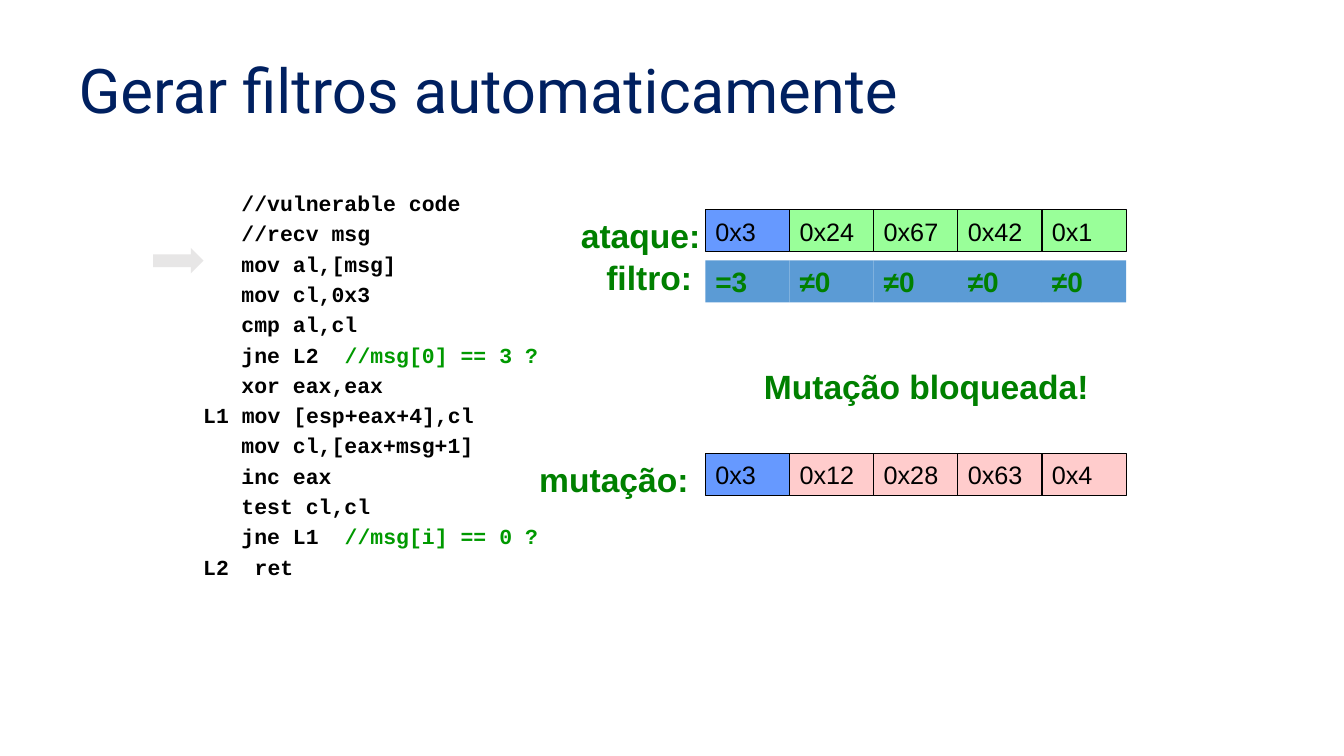
from pptx import Presentation
from pptx.dml.color import RGBColor
from pptx.enum import shapes, text
from pptx.util import Cm, Pt

NAVY = RGBColor(0x00, 0x20, 0x60)
BLACK = RGBColor(0x00, 0x00, 0x00)
GREEN = RGBColor(0x00, 0x80, 0x00)
COMMENT = RGBColor(0x00, 0x99, 0x00)
BLUE = RGBColor(0x66, 0x99, 0xFF)
LIME = RGBColor(0x99, 0xFF, 0x99)
PINK = RGBColor(0xFF, 0xCC, 0xCC)
STEEL = RGBColor(0x5B, 0x9B, 0xD5)
GRAY = RGBColor(0xE7, 0xE6, 0xE6)

ROW_LEFT, CELL_W, CELL_H = 17.78, 2.12, 1.06

CODE = [
    ("\t //vulnerable code", ""),
    ("\t //recv msg", ""),
    ("\t mov al,[msg]", ""),
    ("\t mov cl,0x3", ""),
    ("\t cmp al,cl", ""),
    ("\t jne L2  ", "//msg[0] == 3 ?"),
    ("\t xor eax,eax", ""),
    ("L1 mov [esp+eax+4],cl", ""),
    ("\t mov cl,[eax+msg+1]", ""),
    ("\t inc eax", ""),
    ("\t test cl,cl", ""),
    ("\t jne L1  ", "//msg[i] == 0 ?"),
    ("L2  ret", ""),
]


def add_run(p, content, size=24, color=GREEN, font="Arial", bold=True):
    """Append a formatted run to a paragraph."""
    r = p.add_run()
    r.text = content
    r.font.size = Pt(size)
    r.font.name = font
    r.font.bold = bold
    r.font.color.rgb = color


def add_box(s, left, top, width, height):
    """Add an empty wrapping text box and return its text frame."""
    tf = s.shapes.add_textbox(Cm(left), Cm(top), Cm(width), Cm(height)).text_frame
    tf.word_wrap = True
    return tf


def add_label(s, content, left, top, width):
    """Add a bold green label."""
    add_run(add_box(s, left, top, width, 1.27).paragraphs[0], content)


def add_shape(parent, kind, left, top, width, height, fill, line=None):
    """Add a filled preset shape, outlined only when a line colour is given."""
    sp = parent.shapes.add_shape(kind, Cm(left), Cm(top), Cm(width), Cm(height))
    sp.shadow.inherit = False
    sp.fill.solid()
    sp.fill.fore_color.rgb = fill
    if line is None:
        sp.line.fill.background()
    else:
        sp.line.color.rgb = line
        sp.line.width = Pt(0.75)
    return sp


def add_row(parent, top, values, first_fill, fill, line=None, **fmt):
    """Add a row of adjoining byte cells, the first with its own fill."""
    for i, value in enumerate(values):
        sp = add_shape(parent, shapes.MSO_SHAPE.RECTANGLE, ROW_LEFT + i * CELL_W, top,
                       CELL_W, CELL_H, fill if i else first_fill, line)
        tf = sp.text_frame
        tf.word_wrap = True
        tf.vertical_anchor = text.MSO_ANCHOR.MIDDLE
        p = tf.paragraphs[0]
        p.alignment = text.PP_ALIGN.LEFT
        add_run(p, value, **fmt)


def add_code(s):
    """Add the assembly listing with hanging indents."""
    tf = add_box(s, 4.87, 4.9, 13.12, 9.5)
    for i, (code, comment) in enumerate(CODE):
        p = tf.add_paragraph() if i else tf.paragraphs[0]
        p.line_spacing = 0.6
        p.space_before = Pt(10.6)
        pPr = p._p.get_or_add_pPr()
        pPr.set("marL", str(Cm(0.64)))
        pPr.set("indent", str(-Cm(0.64)))
        add_run(p, code, size=15.3, color=BLACK, font="Courier New")
        if comment:
            add_run(p, comment, size=15.3, color=COMMENT, font="Courier New")


def main():
    """Build the slide and save it."""
    prs = Presentation()
    prs.slide_width, prs.slide_height = Cm(33.87), Cm(19.05)
    s = prs.slides.add_slide(prs.slide_layouts[6])

    tf = add_box(s, 1.73, 0.76, 27.91, 3.18)
    tf.vertical_anchor = text.MSO_ANCHOR.MIDDLE
    tf.paragraphs[0].line_spacing = 0.9
    add_run(tf.paragraphs[0], "Gerar filtros automaticamente", size=44,
            color=NAVY, font="Roboto", bold=False)

    byte_fmt = dict(line=BLACK, size=18, color=BLACK, bold=False)
    add_row(s.shapes.add_group_shape(), 5.29,
            ["0x3", "0x24", "0x67", "0x42", "0x1"], BLUE, LIME, **byte_fmt)
    add_row(s.shapes.add_group_shape(), 11.43,
            ["0x3", "0x12", "0x28", "0x63", "0x4"], BLUE, PINK, **byte_fmt)
    add_row(s, 6.56, ["=3"] + ["≠0"] * 4, STEEL, STEEL, size=20)

    add_label(s, "ataque:", 14.39, 5.29, 3.6)
    add_label(s, "filtro:", 15.03, 6.35, 3.39)
    add_label(s, "mutação:", 13.34, 11.43, 4.45)
    add_code(s)
    add_label(s, "Mutação bloqueada!", 19, 9.1, 8.97)
    add_shape(s, shapes.MSO_SHAPE.RIGHT_ARROW, 3.86, 6.25, 1.27, 0.64, GRAY)

    prs.save("out.pptx")


if __name__ == "__main__":
    main()
